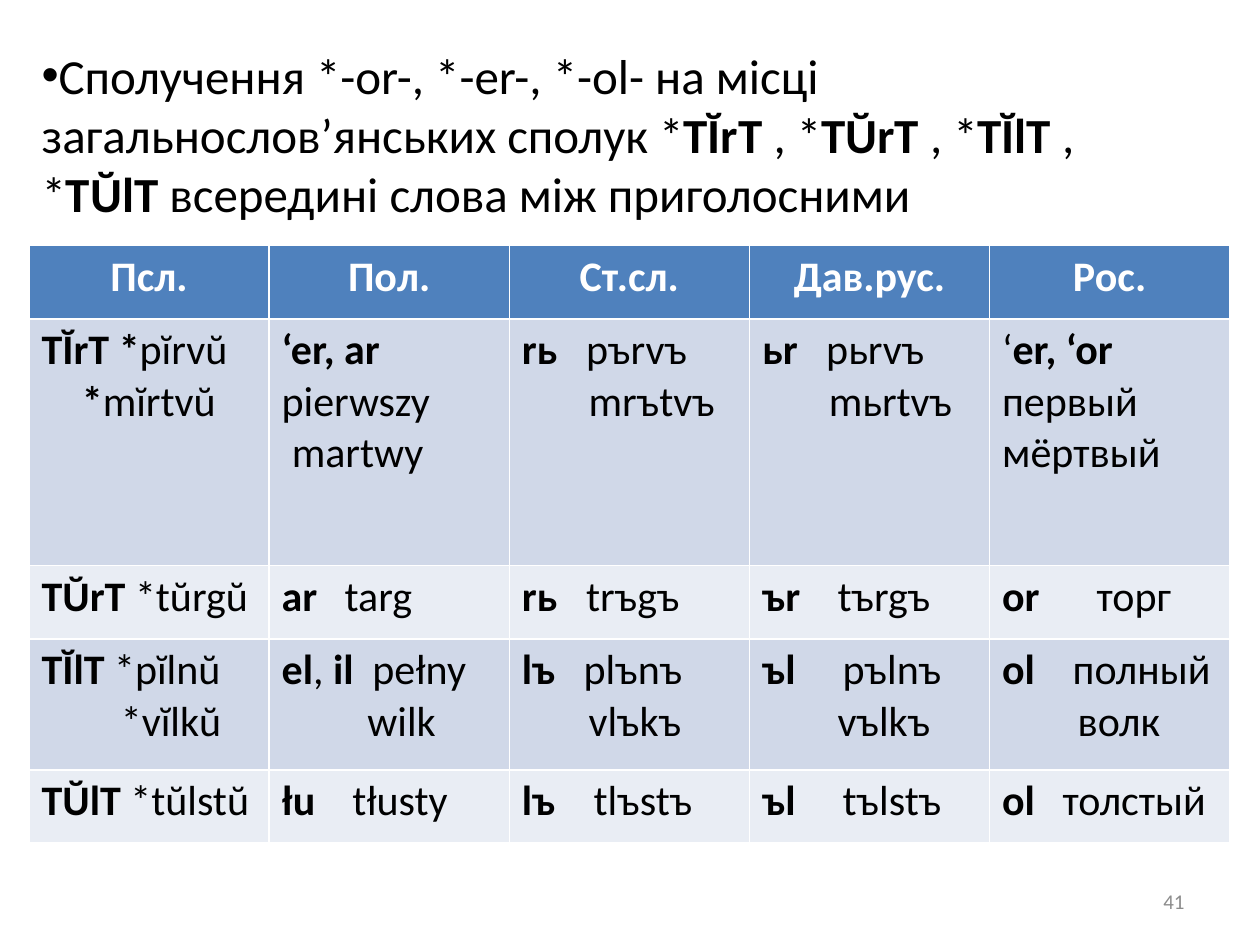
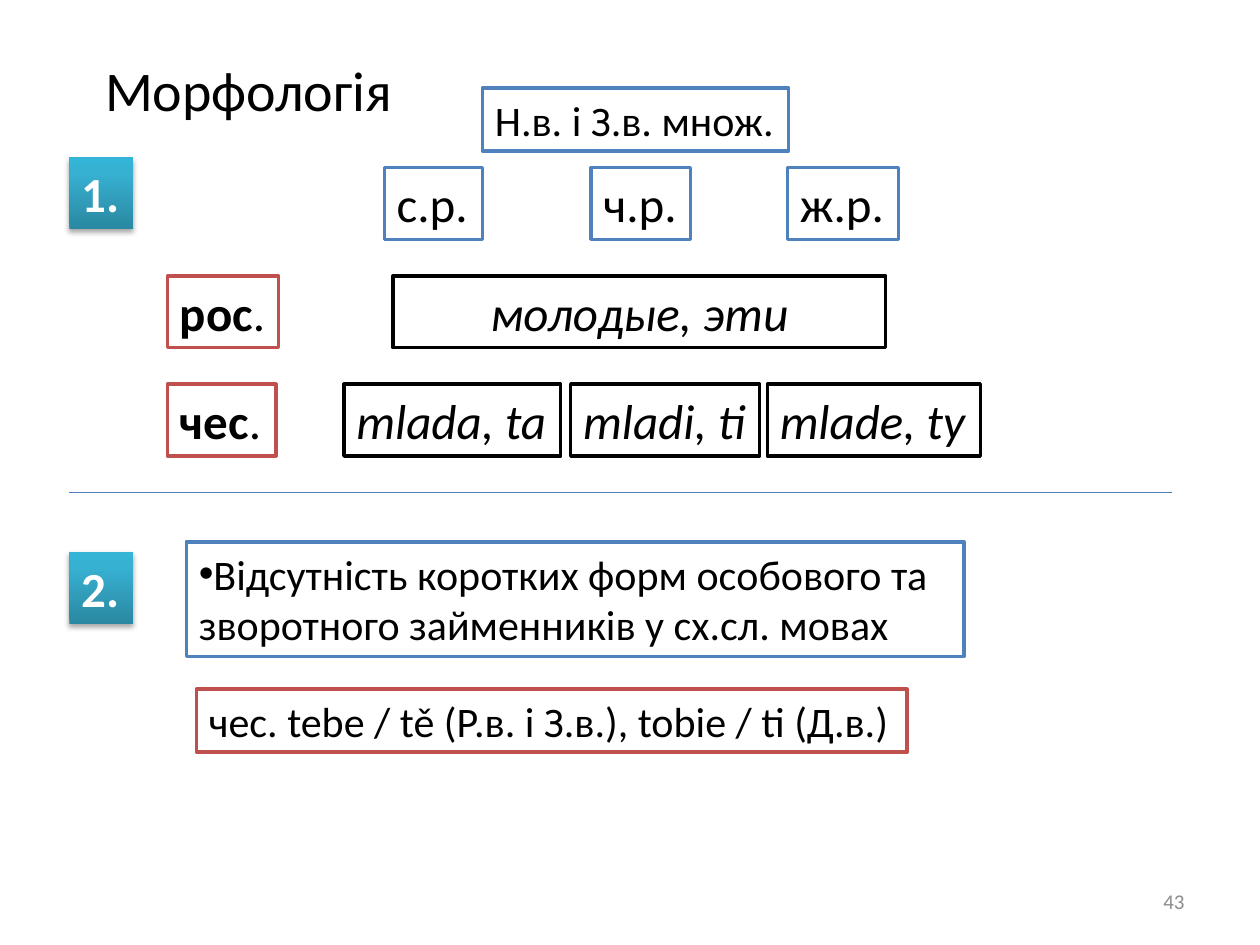
from lxml.etree import SubElement
from pptx import Presentation
from pptx.dml.color import RGBColor
from pptx.enum.shapes import MSO_CONNECTOR, MSO_SHAPE
from pptx.enum.text import MSO_ANCHOR, MSO_AUTO_SIZE, PP_ALIGN
from pptx.oxml import parse_xml
from pptx.oxml.ns import nsdecls, qn
from pptx.util import Inches, Pt

FONT = "Calibri"
COLORS = {
    "black": "000000", "white": "FFFFFF", "grey": "8C8C8C",
    "blue": "4F81BD", "red": "C0504D", "divider": "4B7EBC",
    "band_dark": "D0D8E8", "band_light": "E9EDF4",
}
BADGE_STOPS = [(0, "2A88A2"), (80, "37B1D2"), (100, "34B4D6")]

# Content. A bar switches bold on and off.
RULE = [
    "Сполучення *-оr-, *-еr-, *-оl- на місці загальнослов’янських сполук *"
    "|TĬrT |, *|TŬrT |, *|TĬlT |,",
    "*|TŬlT |всередині слова між приголосними",
]
HEADERS = ["Псл.", "Пол.", "Ст.сл.", "Дав.рус.", "Рос."]
# Each cell is a list of lines: text and the offset of its tab stop or indent.
REFLEXES = [
    [[("|TĬrT *|pĭrvŭ", 0), ("|*|mĭrtvŭ", 0.32)],
     [("|‘er, ar |pierwszy", 0), ("martwy", 0.08)],
     [("|rь|\tpъrvъ", 0.51), ("mrъtvъ", 0.53)],
     [("|ьr|\tpьrvъ", 0.51), ("mьrtvъ", 0.53)],
     [("‘|er, ‘or |первый мёртвый", 0)]],
    [[("|TŬrT| *tŭrgŭ", 0)],
     [("|ar|\ttarg", 0.5)],
     [("|rь|\ttrъgъ", 0.51)],
     [("|ъr|\ttъrgъ", 0.6)],
     [("|оr|\tторг", 0.75)]],
    [[("|TĬlT| *pĭlnŭ", 0), ("*vĭlkŭ", 0.63)],
     [("|el|, |il|\tpełny", 0.72), ("wilk", 0.68)],
     [("|lъ|\tplъnъ", 0.49), ("vlъkъ", 0.53)],
     [("|ъl|\tpъlnъ", 0.64), ("vъlkъ", 0.6)],
     [("|оl|\tполный", 0.56), ("волк", 0.6)]],
    [[("|TŬlT| *tŭlstŭ", 0)],
     [("|łu|\ttłusty", 0.56)],
     [("|lъ|\ttlъstъ", 0.57)],
     [("|ъl|\ttъlstъ", 0.64)],
     [("|оl|\tтолстый", 0.48)]],
]
ROW_HEIGHTS = [0.58, 1.96, 0.58, 1.04, 0.58]

# Rows of 28 pt boxes: top, outline, italic, then (text, left, width)
BOX_ROWS = [
    (1.33, "blue", False, [("c.р.", 3.05, 0.78), ("ч.р.", 4.69, 0.79),
                           ("ж.р.", 6.25, 0.88)]),
    (2.19, "red", False, [("|рос|.", 1.33, 0.88)]),
    (2.19, "black", True, [("молодые, эти", 3.12, 3.91)]),
    (3.05, "red", False, [("|чес|.", 1.33, 0.86)]),
    (3.05, "black", True, [("mlada, ta", 2.73, 1.72), ("mladi, ti", 4.53, 1.5),
                           ("mlade, ty", 6.09, 1.69)]),
]
# 24 pt boxes: text, outline, left, top, width, height
NOTES = [
    ("Н.в. і З.в. множ.", "blue", 3.83, 0.7, 2.43, 0.5),
    ("Відсутність коротких форм особового та зворотного займенників "
     "у сх.сл. мовах", "blue", 1.48, 4.3, 6.17, 0.91),
    ("чес. tebe / tě (Р.в. і З.в.), tobie / ti (Д.в.)", "red",
     1.56, 5.47, 5.64, 0.5),
]
BADGES = [("|1.|", 1.25), ("|2.|", 4.38)]


def rgb(name):
    return RGBColor.from_string(COLORS[name])


def place(sp, *box):
    sp.left, sp.top, sp.width, sp.height = (Inches(v) for v in box)


def write(p, text, size, color="black", align=PP_ALIGN.LEFT, italic=False):
    p.alignment = align
    for i, part in enumerate(text.split("|")):
        if part:
            r = p.add_run()
            r.text = part
            f = r.font
            f.name, f.size = FONT, Pt(size)
            f.bold, f.italic = i % 2 == 1, italic
            f.color.rgb = rgb(color)


def set_bullet(p, char=None):
    pPr = p._p.get_or_add_pPr()
    pPr.set("marL", "0")
    pPr.set("indent", "0")
    if char:
        SubElement(pPr, qn("a:buFont"), typeface="Arial")
        SubElement(pPr, qn("a:buChar"), char=char)
    else:
        SubElement(pPr, qn("a:buNone"))


def set_offset(p, text, offset):
    pPr = p._p.get_or_add_pPr()
    if "\t" in text:
        tabs = SubElement(pPr, qn("a:tabLst"))
        SubElement(tabs, qn("a:tab"), pos=str(Inches(offset)), algn="l")
    elif offset:
        pPr.set("marL", str(Inches(offset)))


def add_number(s, number):
    sp = s.shapes.add_textbox(0, 0, 0, 0)
    place(sp, 7.17, 6.95, 2.33, 0.4)
    tf = sp.text_frame
    tf.word_wrap, tf.vertical_anchor = True, MSO_ANCHOR.MIDDLE
    write(tf.paragraphs[0], number, 12, "grey", PP_ALIGN.RIGHT)


def add_box(s, text, box, size, outline=None, color="black",
            align=PP_ALIGN.LEFT, italic=False, wrap=False):
    sp = s.shapes.add_shape(MSO_SHAPE.RECTANGLE, 0, 0, 0, 0)
    place(sp, *box)
    sp.shadow.inherit = False
    if outline:
        sp.fill.solid()
        sp.fill.fore_color.rgb = rgb("white")
        sp.line.color.rgb = rgb(outline)
        sp.line.width = Pt(2)
    else:
        sp.line.fill.background()
    tf = sp.text_frame
    tf.word_wrap, tf.auto_size = wrap, MSO_AUTO_SIZE.SHAPE_TO_FIT_TEXT
    tf.vertical_anchor = MSO_ANCHOR.TOP
    write(tf.paragraphs[0], text, size, color, align, italic)
    return sp


def add_badge(s, text, top):
    sp = add_box(s, text, (0.55, top, 0.51, 0.57), 28, color="white")
    stops = "".join(f'<a:gs pos="{pos * 1000}"><a:srgbClr val="{c}"/></a:gs>'
                    for pos, c in BADGE_STOPS)
    spPr = sp._element.spPr
    spPr.find(qn("a:prstGeom")).addnext(parse_xml(
        f'<a:gradFill {nsdecls("a")} rotWithShape="1"><a:gsLst>{stops}</a:gsLst>'
        '<a:lin ang="16200000" scaled="0"/></a:gradFill>'))
    spPr.find(qn("a:effectLst")).append(parse_xml(
        f'<a:outerShdw {nsdecls("a")} blurRad="{Pt(3.1)}" dist="{Pt(1.8)}" '
        'dir="5400000" rotWithShape="0"><a:srgbClr val="000000">'
        '<a:alpha val="35000"/></a:srgbClr></a:outerShdw>'))


def fill_cell(cell, color):
    cell.fill.solid()
    cell.fill.fore_color.rgb = rgb(color)
    return cell.text_frame


def build_reflexes(prs):
    s = prs.slides.add_slide(prs.slide_layouts[1])
    title = s.shapes.title._element
    title.getparent().remove(title)

    # Rule above the table
    body = s.placeholders[1]
    place(body, 0.23, 0.31, 9.14, 1.51)
    tf = body.text_frame
    tf.auto_size = MSO_AUTO_SIZE.NONE
    for i, text in enumerate(RULE):
        p = tf.add_paragraph() if i else tf.paragraphs[0]
        write(p, text, 28)
        p.space_before = Pt(0)
        set_bullet(p, None if i else "•")

    # Table of reflexes
    table = s.shapes.add_table(
        len(ROW_HEIGHTS), len(HEADERS), Inches(0.23), Inches(1.95),
        Inches(9.53), Inches(sum(ROW_HEIGHTS))).table
    for row, height in zip(table.rows, ROW_HEIGHTS):
        row.height = Inches(height)
    for c, text in enumerate(HEADERS):
        tf = fill_cell(table.cell(0, c), "blue")
        write(tf.paragraphs[0], f"|{text}|", 24, "white", PP_ALIGN.CENTER)
    for r, row in enumerate(REFLEXES, 1):
        for c, lines in enumerate(row):
            tf = fill_cell(table.cell(r, c), "band_dark" if r % 2 else "band_light")
            for i, (text, offset) in enumerate(lines):
                p = tf.add_paragraph() if i else tf.paragraphs[0]
                write(p, text, 24)
                set_offset(p, text, offset)
    add_number(s, "41")


def build_morphology(prs):
    s = prs.slides.add_slide(prs.slide_layouts[5])
    title = s.shapes.title
    place(title, 0.7, 0.31, 2.55, 0.79)
    title.text_frame.auto_size = MSO_AUTO_SIZE.NONE
    write(title.text_frame.paragraphs[0], "Морфологія", 32, align=PP_ALIGN.CENTER)

    # Gender and language boxes
    for top, outline, italic, boxes in BOX_ROWS:
        for text, left, width in boxes:
            wide = width > 3
            add_box(s, text, (left, top, width, 0.57), 28, outline, italic=italic,
                    align=PP_ALIGN.CENTER if wide else PP_ALIGN.LEFT, wrap=wide)

    # Divider between the two points
    line = s.shapes.add_connector(MSO_CONNECTOR.STRAIGHT, Inches(0.55),
                                  Inches(3.91), Inches(9.3), Inches(3.91))
    line.line.color.rgb = rgb("divider")
    line.line.width = Pt(0.75)
    SubElement(line._element.spPr, qn("a:effectLst"))

    for text, top in BADGES:
        add_badge(s, text, top)

    # Notes; the two-line one is a bullet
    for text, outline, *box in NOTES:
        is_list = box[3] > 0.5
        sp = add_box(s, text, box, 24, outline, wrap=is_list)
        if is_list:
            set_bullet(sp.text_frame.paragraphs[0], "•")
    add_number(s, "43")


def main():
    prs = Presentation()
    prs.slide_width, prs.slide_height = Inches(10), Inches(7.5)
    build_reflexes(prs)
    build_morphology(prs)
    prs.save("out.pptx")


if __name__ == "__main__":
    main()
